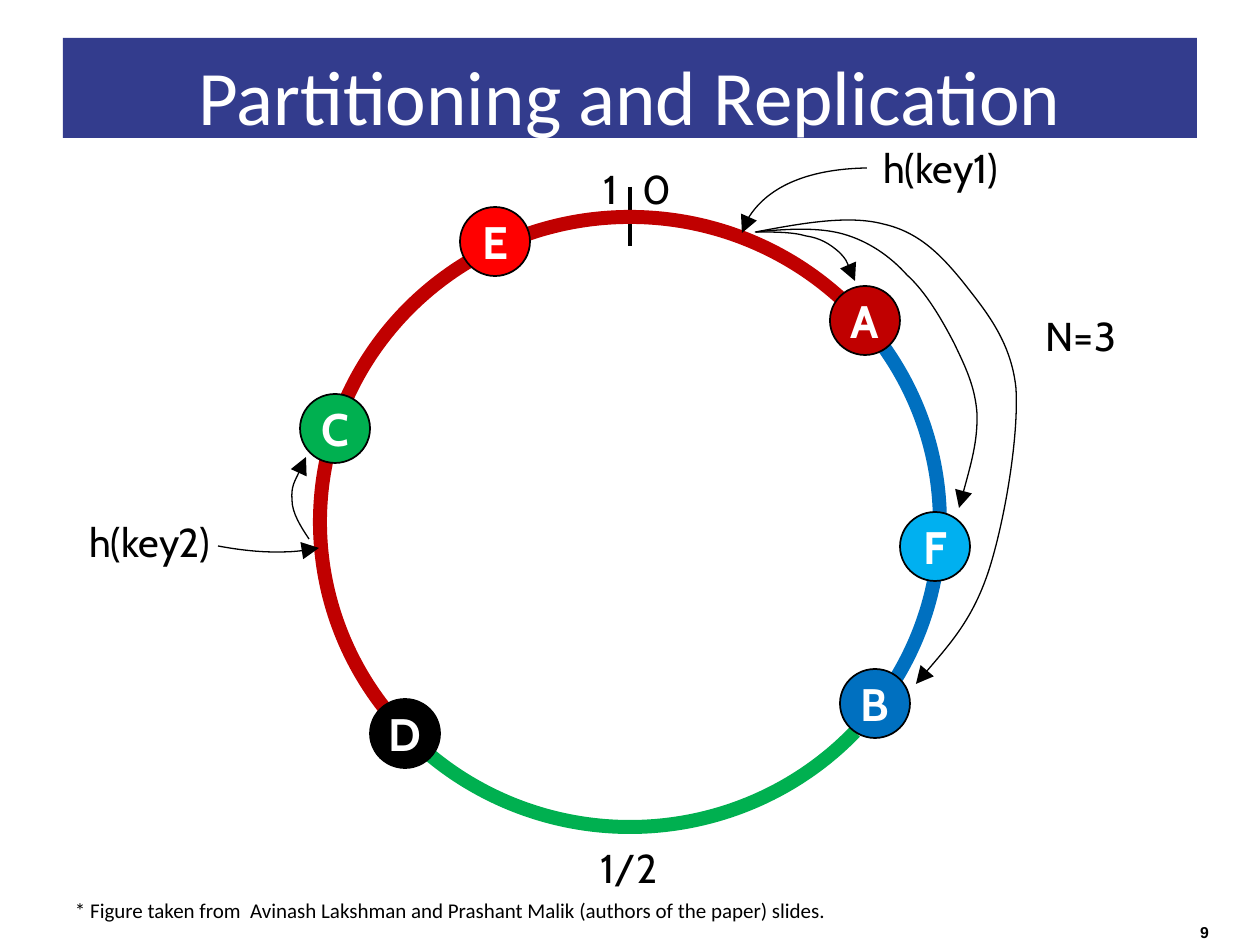
import pptx
import pptx.util
import pptx.dml.color
import pptx.enum.shapes
import pptx.enum.text
import pptx.oxml.ns
import lxml.etree

RGB = pptx.dml.color.RGBColor
SHAPE = pptx.enum.shapes.MSO_SHAPE
ALIGN = pptx.enum.text.PP_ALIGN
ANCHOR = pptx.enum.text.MSO_ANCHOR
Pt = pptx.util.Pt
qn = pptx.oxml.ns.qn

BLACK = RGB(0, 0, 0)
WHITE = RGB(255, 255, 255)
NAVY = RGB(0x33, 0x3C, 0x8D)
RED = RGB(255, 0, 0)
DARK_RED = RGB(0xC0, 0, 0)
GREEN = RGB(0, 0xB0, 0x50)
BLUE = RGB(0, 0x70, 0xC0)
SKY = RGB(0, 0xB0, 0xF0)

SCALE = 914400 // 126  # EMU per px
PAGE = (1260, 945)

# Content: text formats
TITLE = {"name": "Calibri", "size": Pt(44), "bold": False}
LABEL = {"name": "Cabin", "size": Pt(23)}
LETTER = {"name": "Cabin", "size": Pt(26), "bold": True}
NOTE = {"name": "Calibri", "size": Pt(12)}
NUMBER = {"name": "Arial", "size": Pt(9), "bold": True}

# Content: ring box and its arcs (start and end in degrees, clockwise from east)
RING = (320, 217, 620, 610)
ARCS = [
    (43, 131, GREEN),
    (323.6, 30.4, BLUE),
    (142, 313, DARK_RED),
]
TICK = (630, 187, 630, 246)

# Content: nodes by left and top
NODE_SIZE = (70, 69)
NODES = [
    ("F", 900, 512, SKY),
    ("E", 460, 207, RED),
    ("D", 370, 699, BLACK),
    ("C", 300, 394, GREEN),
    ("B", 840, 669, BLUE),
    ("A", 830, 286, DARK_RED),
]

# Content: arrows as a start point, then three points for each Bezier curve
ARROWS = [
    # key 1 to the ring
    [(867, 168), (805, 169), (752, 195), (742, 233)],
    # key 1 to A
    [(755, 232), (774, 232), (793, 232), (806, 236),
     (820, 238), (830, 244), (839, 252),
     (847, 260), (851, 271), (855, 281)],
    # key 1 to F
    [(756, 232), (786, 229), (818, 227), (843, 234),
     (868, 241), (890, 256), (907, 275),
     (926, 292), (942, 320), (954, 343),
     (965, 366), (975, 386), (977, 413),
     (978, 441), (968, 475), (959, 508)],
    # key 1 to B
    [(756, 232), (803, 223), (849, 215), (883, 224),
     (919, 232), (941, 255), (963, 282),
     (984, 309), (1011, 340), (1016, 388),
     (1019, 436), (1005, 520), (989, 570),
     (973, 619), (944, 651), (916, 684)],
    # key 2 to the ring
    [(218, 546), (234, 549), (255, 552), (275, 552),
     (290, 552), (305, 551), (319, 548)],
    # key 2 to C
    [(309, 539), (301, 527), (292, 513), (292, 500),
     (291, 486), (299, 473), (306, 457)],
]

# Content: text boxes
TEXTS = [
    ("0", (630, 158, 47, 59), LABEL, ALIGN.CENTER),
    ("1", (470, 158, 160, 60), LABEL, ALIGN.RIGHT),
    ("1/2", (549, 837, 160, 60), LABEL, ALIGN.CENTER),
    ("N=3", (1030, 305, 102, 59), LABEL, ALIGN.CENTER),
    ("h(key1)", (860, 137, 161, 59), LABEL, ALIGN.CENTER),
    ("h(key2)", (69, 511, 161, 59), LABEL, ALIGN.CENTER),
    ("9", (1164, 917, 57, 28), NUMBER, ALIGN.RIGHT),
    ("* Figure taken from  Avinash Lakshman and Prashant Malik "
     "(authors of the paper) slides.",
     (63, 892, 1124, 40), NOTE, ALIGN.LEFT),
]


def px(*nums):
    return [round(n * SCALE) for n in nums]


def write(shape, text, font, align, color, pads, anchor):
    frame = shape.text_frame
    frame.word_wrap = True
    frame.vertical_anchor = anchor
    sides = ("margin_left", "margin_top", "margin_right", "margin_bottom")
    for side, pad in zip(sides, px(*pads)):
        setattr(frame, side, pad)
    para = frame.paragraphs[0]
    para.alignment = align
    run = para.add_run()
    run.text = text
    run.font.color.rgb = color
    for key, value in font.items():
        setattr(run.font, key, value)


def stroke(shape, color, width):
    shape.line.color.rgb = color
    shape.line.width = Pt(width)


def add_solid(slide, kind, box, fill):
    shape = slide.shapes.add_shape(kind, *px(*box))
    shape.shadow.inherit = False
    shape.fill.solid()
    shape.fill.fore_color.rgb = fill
    return shape


def add_arc(slide, start, end, color):
    arc = slide.shapes.add_shape(SHAPE.ARC, *px(*RING))
    arc.shadow.inherit = False
    arc.fill.background()
    for i, angle in enumerate((start, end)):
        arc.adjustments[i] = angle * 0.6  # 60000 units per degree
    stroke(arc, color, 8)


def add_arrow(slide, points):
    pen = slide.shapes.build_freeform(*points[0], scale=SCALE)
    pen.add_line_segments(points[1:], close=False)
    curve = pen.convert_to_shape()
    curve.shadow.inherit = False
    curve.fill.background()
    stroke(curve, BLACK, 0.75)
    # Turn each three straight steps into one Bezier curve
    track = curve._element.find(".//" + qn("a:path"))
    steps = track.findall(qn("a:lnTo"))
    for i in range(0, len(steps), 3):
        bend = lxml.etree.SubElement(track, qn("a:cubicBezTo"))
        for step in steps[i:i + 3]:
            bend.append(step[0])
            track.remove(step)
    lxml.etree.SubElement(curve.line._get_or_add_ln(), qn("a:tailEnd"),
                          type="triangle", w="lg", len="lg")


def main():
    deck = pptx.Presentation()
    deck.slide_width, deck.slide_height = px(*PAGE)
    slide = deck.slides.add_slide(deck.slide_layouts[6])

    # Tick at the top of the ring
    tick = slide.shapes.add_connector(
        pptx.enum.shapes.MSO_CONNECTOR.STRAIGHT, *px(*TICK))
    stroke(tick, BLACK, 2.25)
    lxml.etree.SubElement(tick._element.spPr, qn("a:effectLst"))

    # Ring
    for arc in ARCS:
        add_arc(slide, *arc)

    # Nodes
    for name, left, top, fill in NODES:
        node = add_solid(slide, SHAPE.OVAL, (left, top, *NODE_SIZE), fill)
        stroke(node, BLACK, 1)
        write(node, name, LETTER, ALIGN.CENTER, WHITE, (0, 0, 0, 0),
              ANCHOR.MIDDLE)

    # Arrows
    for points in ARROWS:
        add_arrow(slide, points)

    # Title bar
    bar = add_solid(slide, SHAPE.RECTANGLE, (63, 38, 1134, 100), NAVY)
    bar.line.fill.background()
    write(bar, "Partitioning and Replication", TITLE, ALIGN.CENTER, WHITE,
          (12, 11, 12, 0), ANCHOR.TOP)

    # Labels, page number and footnote
    for text, box, font, align in TEXTS:
        field = slide.shapes.add_textbox(*px(*box))
        write(field, text, font, align, BLACK, (12, 6, 12, 6), ANCHOR.TOP)

    deck.save("out.pptx")


if __name__ == "__main__":
    main()
